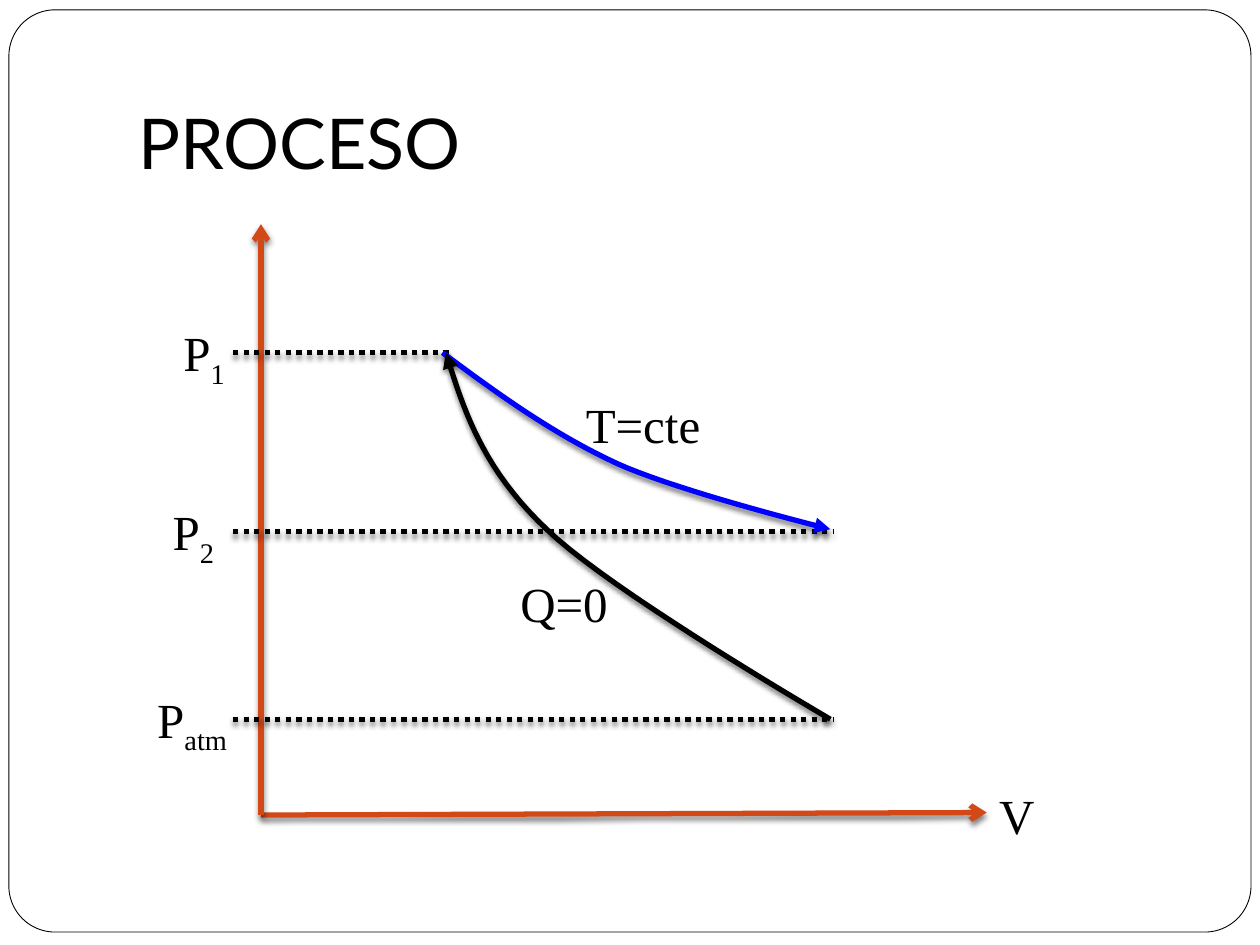
from lxml import etree
from pptx import Presentation
from pptx.dml.color import RGBColor
from pptx.enum.dml import MSO_LINE
from pptx.enum.shapes import MSO_CONNECTOR, MSO_SHAPE
from pptx.enum.text import MSO_ANCHOR
from pptx.oxml.ns import qn
from pptx.util import Cm, Pt

STRAIGHT = MSO_CONNECTOR.STRAIGHT
ROUNDED = MSO_SHAPE.ROUNDED_RECTANGLE
DOTTED = MSO_LINE.ROUND_DOT
BOTTOM, TOP = MSO_ANCHOR.BOTTOM, MSO_ANCHOR.TOP

BLACK, BLUE, ORANGE, WHITE = "000000", "0000FF", "D34817", "FFFFFF"
SERIF, SANS = "Times New Roman", "Lato"

# Content, all lengths in cm
TITLE = "PROCESO"
ORIGIN = (5.26, 16.43)
AXIS_ENDS = [(19.89, 16.38), (5.26, 4.52)]
LEVEL_LEFT = 4.7
LABEL_HEIGHT = 1.45
# subscript, level, right end of the dotted line, label left
LEVELS = [
    ("atm", 14.5, 16.79, 2.92),
    ("2", 10.72, 16.79, 3.23),
    ("1", 7.11, 9.12, 3.45),
]
# colour, arrowhead end, Bezier points: start, then three per segment
ISOTHERM = (BLUE, "tailEnd", [
    (8.92, 7.11), (10.01, 7.92), (11.13, 8.74), (12.45, 9.35),
    (13.74, 9.93), (16.74, 10.67), (16.74, 10.67)])
ADIABAT = (BLACK, "headEnd", [
    (8.99, 7.11), (9.35, 8.28), (9.73, 9.45), (11.02, 10.67),
    (12.29, 11.91), (16.74, 14.5), (16.74, 14.5)])
# text, left, top, width
LABELS = [
    ("Q=0", 10.24, 11.43, 2.62),
    ("T=cte", 11.56, 7.82, 3.15),
    ("V", 19.89, 15.72, 1.17),
]


def color(value):
    return RGBColor.from_string(value)


def style_stroke(stroke, line_color, arrow_end=None, arrow_type="triangle"):
    """Give a line its colour, width, arrowhead and soft shadow."""
    stroke.line.color.rgb = color(line_color)
    stroke.line.width = Pt(3)
    properties = stroke._element.spPr
    if arrow_end:
        outline = properties.find(qn("a:ln"))
        etree.SubElement(outline, qn("a:" + arrow_end), type=arrow_type)
    effects = etree.SubElement(properties, qn("a:effectLst"))
    shadow = etree.SubElement(effects, qn("a:outerShdw"), blurRad=str(Pt(3)),
                              dist=str(Pt(2)), dir="5400000", rotWithShape="0")
    tint = etree.SubElement(shadow, qn("a:srgbClr"), val=BLACK)
    etree.SubElement(tint, qn("a:alpha"), val="50000")


def add_line(shapes, start, end):
    return shapes.add_connector(STRAIGHT, *(Cm(v) for v in start + end))


def bezier_points(points, steps=20):
    """Sample a chain of cubic Bezier segments."""
    sampled = [points[0]]
    for first in range(0, len(points) - 1, 3):
        controls = points[first:first + 4]
        for step in range(1, steps + 1):
            t = step / steps
            weights = ((1 - t) ** 3, 3 * t * (1 - t) ** 2,
                       3 * t ** 2 * (1 - t), t ** 3)
            sampled.append(tuple(
                sum(w * point[axis] for w, point in zip(weights, controls))
                for axis in (0, 1)))
    return sampled


def add_curve(shapes, curve):
    line_color, arrow_end, points = curve
    start, *rest = [(Cm(x), Cm(y)) for x, y in bezier_points(points)]
    builder = shapes.build_freeform(*start)
    builder.add_line_segments(rest, close=False)
    process = builder.convert_to_shape()
    process.fill.background()
    style_stroke(process, line_color, arrow_end)


def add_text(shapes, text, box, size=28, font=SERIF, anchor=TOP, subscript=""):
    frame = shapes.add_textbox(*(Cm(v) for v in box)).text_frame
    frame.word_wrap = True
    frame.vertical_anchor = anchor
    paragraph = frame.paragraphs[0]
    paragraph.text = text
    if subscript:
        lowered = paragraph.add_run()
        lowered.text = subscript
        lowered._r.get_or_add_rPr().set("baseline", "-25000")
    for run in paragraph.runs:
        run.font.size = Pt(size)
        run.font.name = font
        run.font.color.rgb = color(BLACK)
    return frame


def main():
    presentation = Presentation()
    presentation.slide_width, presentation.slide_height = Cm(25.4), Cm(19.05)
    slide = presentation.slides.add_slide(presentation.slide_layouts[6])
    shapes = slide.shapes

    # Frame and title
    frame = shapes.add_shape(ROUNDED, Cm(0.18), Cm(0.2), Cm(25.04), Cm(18.59))
    frame.adjustments[0] = 0.05
    frame.shadow.inherit = False
    frame.fill.solid()
    frame.fill.fore_color.rgb = color(WHITE)
    frame.line.color.rgb = color(BLACK)
    frame.line.width = Pt(0.5)
    title = add_text(shapes, TITLE, (2.54, 0.76, 21.59, 3.18), 40, SANS, BOTTOM)
    title.margin_bottom = Cm(0.25)

    # Axes
    for end in AXIS_ENDS:
        style_stroke(add_line(shapes, ORIGIN, end), ORANGE, "tailEnd", "arrow")

    # Pressure levels
    for subscript, level, right, label_left in LEVELS:
        guide = add_line(shapes, (LEVEL_LEFT, level), (right, level))
        guide.line.dash_style = DOTTED
        style_stroke(guide, BLACK)
        add_text(shapes, "P", (label_left, level - LABEL_HEIGHT / 2, 2.06,
                               LABEL_HEIGHT), subscript=subscript)

    # Processes and their labels
    add_curve(shapes, ISOTHERM)
    for text, left, top, width in LABELS:
        add_text(shapes, text, (left, top, width, LABEL_HEIGHT))
    add_curve(shapes, ADIABAT)

    presentation.save("out.pptx")


if __name__ == "__main__":
    main()
